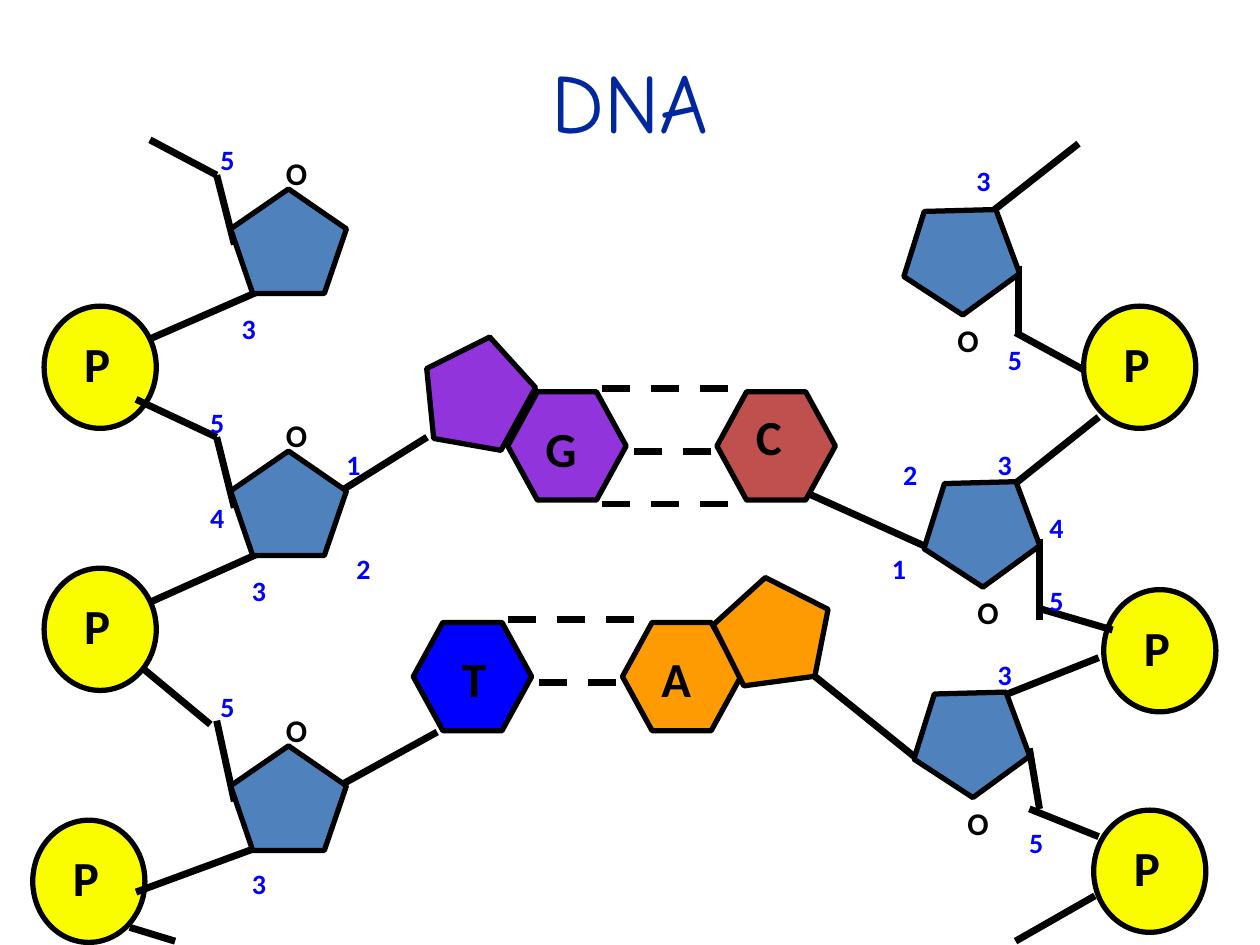
"""Build the DNA slide: two sugar-phosphate strands joined by base pairs."""
import lxml.etree
import pptx
import pptx.dml.color
import pptx.enum.dml
import pptx.enum.shapes
import pptx.enum.text
import pptx.oxml.ns
import pptx.util

RGB = pptx.dml.color.RGBColor
SHAPE = pptx.enum.shapes.MSO_SHAPE
BLACK = RGB(0x00, 0x00, 0x00)
NAVY = RGB(0x00, 0x27, 0x9F)
BLUE = RGB(0x00, 0x00, 0xFF)
YELLOW = RGB(0xFA, 0xFD, 0x00)
STEEL = RGB(0x4F, 0x81, 0xBD)
PURPLE = RGB(0x92, 0x34, 0xDB)
RED = RGB(0xC0, 0x50, 0x4D)
ORANGE = RGB(0xFE, 0x9B, 0x03)

WIDTH, HEIGHT = pptx.util.Inches(10), pptx.util.Inches(7.5)
COLUMNS, ROWS = 1000, 750
CIRCLE, PENTAGON, HEXAGON = (89, 97), (92, 83), (94, 86)

LEFT_STRAND = dict(
    phosphates=[(35, 451), (26, 651), (35, 243)],
    sugars=[(183, 592), (183, 358), (183, 150)],
    turn=0,
    oxygen=(34, -33),
    bonds=[
        (267, 392, 339, 347), (267, 625, 347, 581), (108, 317, 172, 347),
        (186, 403, 172, 347), (186, 636, 172, 572), (167, 575, 114, 531),
        (119, 478, 206, 439), (108, 708, 206, 672), (103, 736, 139, 747),
        (119, 269, 206, 231), (186, 194, 172, 139), (119, 111, 172, 139),
    ],
    carbons=[
        ("1", 265, 350), ("2", 273, 433), ("3", 190, 450), ("4", 157, 392),
        ("5", 157, 317), ("5", 165, 542), ("3", 190, 683), ("3", 182, 242),
        ("5", 165, 108),
    ],
)
RIGHT_STRAND = dict(
    phosphates=[(868, 643), (876, 468), (860, 243)],
    sugars=[(725, 550), (733, 383), (717, 167)],
    turn=178.5,
    oxygen=(33, 83),
    bonds=[
        (642, 392, 733, 433), (642, 533, 725, 600), (817, 594, 825, 642),
        (825, 428, 825, 492), (817, 642, 872, 664), (825, 483, 883, 500),
        (803, 386, 872, 331), (794, 553, 872, 522), (869, 711, 806, 747),
        (861, 294, 806, 264), (808, 211, 808, 264), (786, 169, 856, 114),
    ],
    carbons=[
        ("1", 698, 433), ("2", 707, 358), ("3", 782, 350), ("4", 823, 400),
        ("5", 823, 458), ("5", 807, 650), ("3", 782, 517), ("5", 790, 267),
        ("3", 765, 125),
    ],
)
GC_PAIR = dict(
    rings=[(403, 311, PURPLE), (569, 311, RED)],
    bonds=[(478, 308, 589), (503, 358, 564), (478, 400, 589)],
    letters=[("G", 423, 327, 46), ("C", 590, 318, 44)],
    side_ring=(329, 271, PURPLE, 298.9),
)
AT_PAIR = dict(
    rings=[(494, 494, ORANGE), (328, 494, BLUE)],
    bonds=[(428, 542, 497), (403, 492, 514)],
    letters=[("T", 357, 510, 47), ("A", 515, 510, 48)],
    side_ring=(567, 458, ORANGE, 352.3),
)


def grid(*cells):
    """Turn alternating columns and rows into slide lengths."""
    units = (WIDTH / COLUMNS, HEIGHT / ROWS)
    return [round(cell * units[i % 2]) for i, cell in enumerate(cells)]


def add_molecule(g, kind, x, y, size, color, turn=0):
    """Add one outlined shape for a phosphate, sugar or base."""
    sp = g.shapes.add_shape(kind, *grid(x, y, *size))
    sp.shadow.inherit = False
    sp.fill.solid()
    sp.fill.fore_color.rgb = color
    sp.line.color.rgb = BLACK
    sp.line.width = pptx.util.Pt(3)
    sp.rotation = turn
    if kind == SHAPE.HEXAGON:
        sp.adjustments[0] = 0.274


def add_bond(g, x1, y1, x2, y2, dashed=False):
    """Add a straight bond between two grid points."""
    line = pptx.enum.shapes.MSO_CONNECTOR.STRAIGHT
    cxn = g.shapes.add_connector(line, *grid(x1, y1, x2, y2))
    cxn.line.color.rgb = BLACK
    cxn.line.width = pptx.util.Pt(4)
    if dashed:
        cxn.line.dash_style = pptx.enum.dml.MSO_LINE.DASH
    lxml.etree.SubElement(cxn.element.spPr, pptx.oxml.ns.qn("a:effectLst"))


def add_label(g, text, x, y, size, points, color=BLACK):
    """Add a bold label that does not wrap."""
    tf = g.shapes.add_textbox(*grid(x, y, *size)).text_frame
    tf.word_wrap = False
    tf.auto_size = pptx.enum.text.MSO_AUTO_SIZE.SHAPE_TO_FIT_TEXT
    tf.text = text
    font = tf.paragraphs[0].runs[0].font
    font.name, font.size, font.bold = "Calibri", pptx.util.Pt(points), True
    font.color.rgb = color


def add_strand(s, phosphates, sugars, turn, oxygen, bonds, carbons):
    """Add a sugar-phosphate backbone with its numbered carbons."""
    g = s.shapes.add_group_shape()
    for x, y in phosphates:
        add_molecule(g, SHAPE.OVAL, x, y, CIRCLE, YELLOW)
    for bond in bonds:
        add_bond(g, *bond)
    for x, y in phosphates:
        add_label(g, "P", x + 22, y + 17, (40, 56), 28)
    for x, y in sugars:
        add_label(g, "O", x + oxygen[0], y + oxygen[1], (40, 40), 18)
    for number, x, y in carbons:
        add_label(g, number, x, y, (33, 36), 16, BLUE)
    for x, y in sugars:
        add_molecule(g, SHAPE.REGULAR_PENTAGON, x, y, PENTAGON, STEEL, turn)


def add_base_pair(s, rings, bonds, letters, side_ring):
    """Add two bases joined by dashed hydrogen bonds."""
    g = s.shapes.add_group_shape()
    for x, y, color in rings:
        add_molecule(g, SHAPE.HEXAGON, x, y, HEXAGON, color)
    for x1, y, x2 in bonds:
        add_bond(g, x1, y, x2, y, dashed=True)
    for letter, x, y, width in letters:
        add_label(g, letter, x, y, (width, 56), 28)
    x, y, color, turn = side_ring
    add_molecule(g, SHAPE.REGULAR_PENTAGON, x, y, PENTAGON, color, turn)


def set_title(s, text):
    """Place and format the title."""
    title = s.shapes.title
    title.left, title.top, title.width, title.height = grid(75, 17, 850, 125)
    tf = title.text_frame
    tf.text = text
    tf.vertical_anchor = pptx.enum.text.MSO_ANCHOR.MIDDLE
    p = tf.paragraphs[0]
    p.alignment = pptx.enum.text.PP_ALIGN.CENTER
    font = p.runs[0].font
    font.name, font.size = "Comic Neue", pptx.util.Pt(48)
    font.color.rgb = NAVY


def main():
    """Build and save the slide."""
    prs = pptx.Presentation()
    prs.slide_width, prs.slide_height = WIDTH, HEIGHT
    s = prs.slides.add_slide(prs.slide_layouts[5])
    set_title(s, "DNA")
    for strand in (LEFT_STRAND, RIGHT_STRAND):
        add_strand(s, **strand)
    for pair in (GC_PAIR, AT_PAIR):
        add_base_pair(s, **pair)
    prs.save("out.pptx")


if __name__ == "__main__":
    main()
